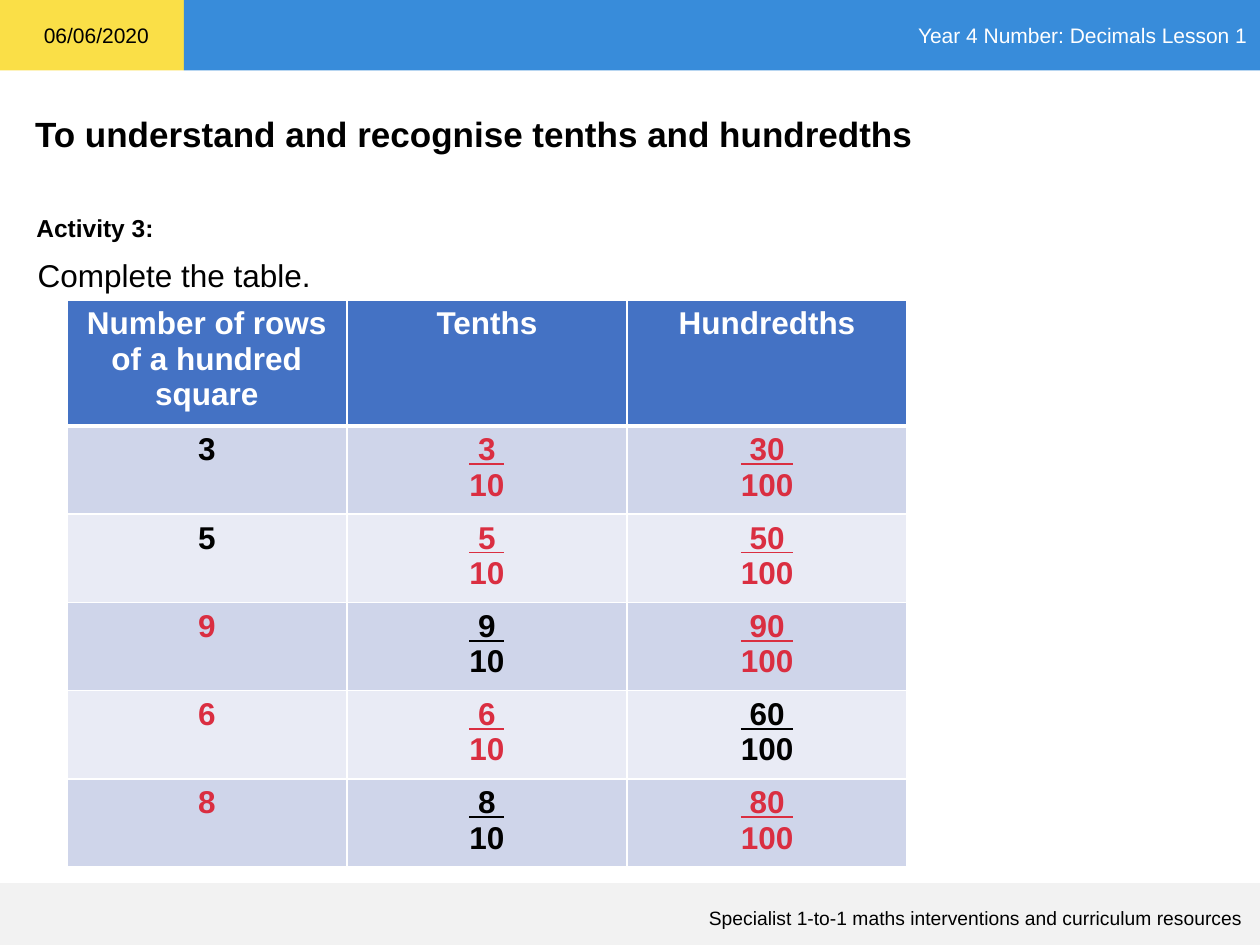
from lxml import etree
from pptx import Presentation, util as u
from pptx.dml.color import RGBColor
from pptx.enum import shapes, text
from pptx.oxml import ns

BLACK = RGBColor(0x00, 0x00, 0x00)
WHITE = RGBColor(0xFF, 0xFF, 0xFF)
RED = RGBColor(0xDA, 0x2E, 0x41)
YELLOW = RGBColor(0xFA, 0xDF, 0x47)
BLUE = RGBColor(0x38, 0x8C, 0xDA)
GREY = RGBColor(0xF2, 0xF2, 0xF2)
HEAD = RGBColor(0x44, 0x72, 0xC4)
BANDS = (RGBColor(0xCF, 0xD5, 0xEA), RGBColor(0xE9, 0xEB, 0xF5))

HEADERS = ("Number of rows of a hundred square", "Tenths", "Hundredths")
ROWS = ((3, 0), (5, 0), (9, 1), (6, 2), (8, 1))


def write(frame, *lines, size=18, color=BLACK, bold=False, align=None, under=False):
    for i, line in enumerate(lines):
        para = frame.paragraphs[0] if i == 0 else frame.add_paragraph()
        para.alignment = align
        run = para.add_run()
        run.text = line
        font = run.font
        font.name, font.size, font.bold = "Arial", u.Pt(size), bold
        font.color.rgb = color
        font.underline = under and i == 0


class Page:
    """Holds the slide and draws its bars, labels and table."""

    def __init__(self, slide):
        self.slide = slide

    def bar(self, x, y, w, h, fill):
        box = self.slide.shapes.add_shape(
            shapes.MSO_SHAPE.RECTANGLE, *map(u.Inches, (x, y, w, h)))
        box.shadow.inherit = False
        box.fill.solid()
        box.fill.fore_color.rgb = fill
        box.line.fill.background()
        frame = box.text_frame
        frame.vertical_anchor = text.MSO_ANCHOR.MIDDLE
        return frame

    def label(self, x, y, w, h, words, wrap=True, **style):
        box = self.slide.shapes.add_textbox(*map(u.Inches, (x, y, w, h)))
        box.text_frame.word_wrap = wrap
        write(box.text_frame, words, **style)

    def edge(self, cell, **widths):
        props = cell._tc.get_or_add_tcPr()
        for i, side in enumerate("LRTB"):
            line = etree.Element(ns.qn(f"a:ln{side}"), w=str(u.Pt(widths.get(side, 1))))
            fill = etree.SubElement(line, ns.qn("a:solidFill"))
            etree.SubElement(fill, ns.qn("a:srgbClr"), val=str(WHITE))
            props.insert(i, line)

    def cell(self, cell, lines, fill, color, under=False, **widths):
        cell.fill.solid()
        cell.fill.fore_color.rgb = fill
        write(cell.text_frame, *lines, color=color, bold=True,
              align=text.PP_ALIGN.CENTER, under=under)
        self.edge(cell, **widths)

    def table(self, x, y, w, head, high):
        total = head + high * len(ROWS)
        grid = self.slide.shapes.add_table(
            len(ROWS) + 1, len(HEADERS), *map(u.Inches, (x, y, w, total))).table
        for row in grid.rows:
            row.height = u.Inches(high)
        grid.rows[0].height = u.Inches(head)
        for c, name in enumerate(HEADERS):
            self.cell(grid.cell(0, c), [name], HEAD, WHITE, B=3)
        for r, (count, given) in enumerate(ROWS, 1):
            parts = ([f"{count}"], [f" {count} ", "10"], [f" {count}0 ", "100"])
            for c, lines in enumerate(parts):
                self.cell(grid.cell(r, c), lines, BANDS[(r - 1) % 2],
                          BLACK if c == given else RED,
                          under=c > 0, T=3 if r == 1 else 1)


def main():
    deck = Presentation()
    deck.slide_width, deck.slide_height = u.Inches(10), u.Inches(7.5)
    page = Page(deck.slides.add_slide(deck.slide_layouts[6]))
    right = text.PP_ALIGN.RIGHT
    page.bar(0, 0, 1.46, 0.56, YELLOW)
    banner = page.bar(1.46, 0, 8.54, 0.56, BLUE)
    write(banner, "Year 4 Number: Decimals Lesson 1", size=12, color=WHITE, align=right)
    page.bar(0, 7.01, 10, 0.49, GREY)
    page.label(0.42, 7.14, 9.54, 0.27,
               "Specialist 1-to-1\u00a0maths\u00a0interventions and curriculum resources".replace("\u00a0", " "),
               size=11, align=right)
    page.label(0.18, 0.84, 9.6, 0.44,
               "To understand and recognise tenths and hundredths", size=20, bold=True)
    page.label(0.25, 0.13, 1.04, 0.3, "06/06/2020", wrap=False, size=12)
    page.label(0.2, 1.98, 9.58, 0.4, "Complete the table.")
    page.table(0.53, 2.38, 6.67, 0.99, 0.7)
    page.label(0.19, 1.64, 1.14, 0.34, "Activity 3:", wrap=False, size=14, bold=True)
    deck.save("out.pptx")


if __name__ == "__main__":
    main()
